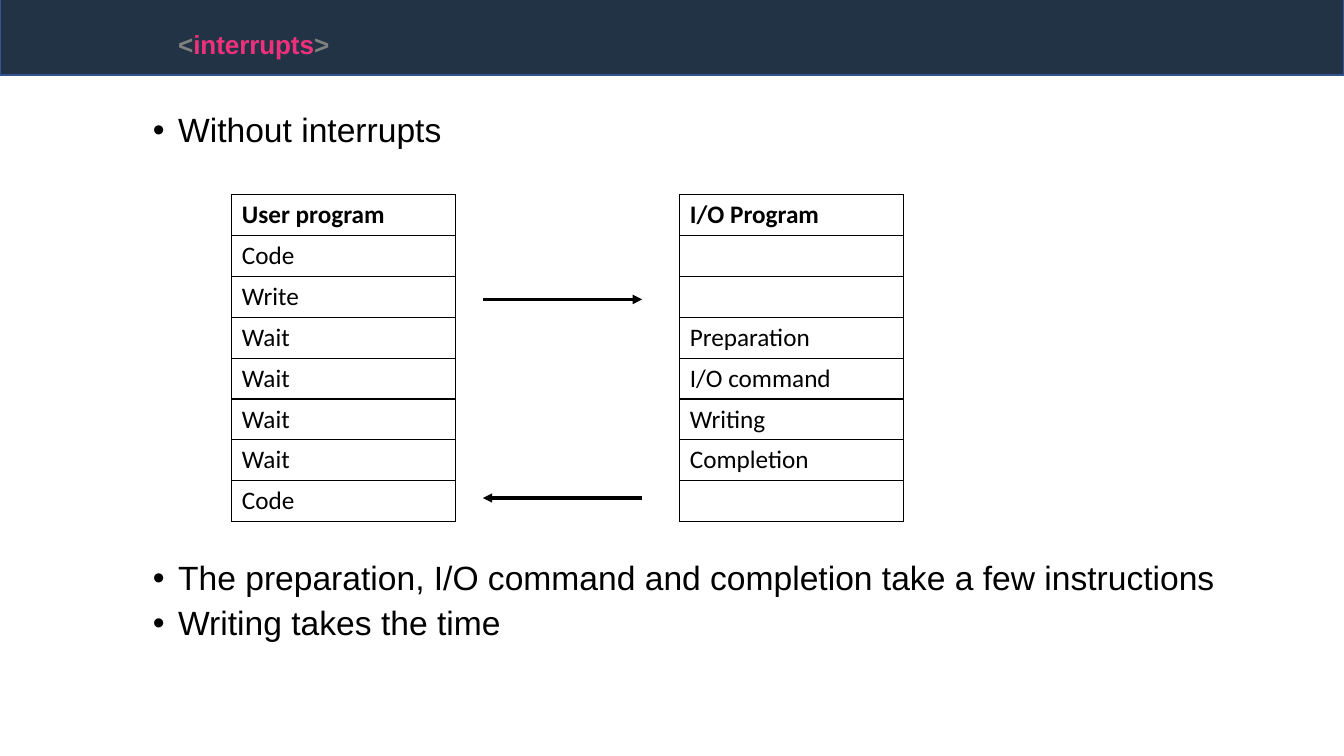
from lxml.etree import SubElement
from pptx import Presentation
from pptx.dml.color import RGBColor
from pptx.enum.shapes import MSO_CONNECTOR as Connector, MSO_SHAPE as Shape
from pptx.oxml.ns import qn
from pptx.util import Pt

COLORS = {"bar": "223346", "bar_edge": "325491", "text": "000000",
          "bracket": "808080", "title": "F1307C"}
USER_STEPS = ["User program", "Code", "Write", "Wait", "Wait", "Wait", "Wait", "Code"]
IO_STEPS = ["I/O Program", "", "", "Preparation", "I/O command", "Writing", "Completion", ""]
# Bullet text and the space before it
BULLETS = [("Without interrupts", 0),
           ("The preparation, I/O command and completion take a few instructions", 294),
           ("Writing takes the time", 6.5)]


def color(name):
    return RGBColor.from_string(COLORS[name])


def set_font(font, name, size, bold=False):
    font.name, font.size, font.bold = name, Pt(size), bold
    font.color.rgb = color("text")


def add_header(slide, left, top, width, height):
    bar = slide.shapes.add_shape(Shape.RECTANGLE, Pt(left), Pt(top), Pt(width), Pt(height))
    bar.shadow.inherit = False
    bar.fill.solid()
    bar.fill.fore_color.rgb = color("bar")
    bar.line.color.rgb = color("bar_edge")
    bar.line.width = Pt(1)

    # Raised tag-style title
    title = slide.shapes.add_textbox(Pt(left + 120.2), Pt(top + 15.5), Pt(125.3), Pt(46))
    title.text_frame.word_wrap = False
    paragraph = title.text_frame.paragraphs[0]
    set_font(paragraph.font, "Arial", 32, True)
    for text, shade in [("<", "bracket"), ("interrupts", "title"), (">", "bracket")]:
        run = paragraph.add_run()
        run.text = text
        run.font.color.rgb = color(shade)
        run._r.get_or_add_rPr().set("baseline", "30000")


def add_bullets(slide, left, top, width, height):
    body = slide.shapes.add_textbox(Pt(left), Pt(top), Pt(width), Pt(height)).text_frame
    body.word_wrap = True
    for index, (text, gap) in enumerate(BULLETS):
        paragraph = body.add_paragraph() if index else body.paragraphs[0]
        paragraph.text = text
        properties = paragraph._p.get_or_add_pPr()
        properties.set("marL", str(Pt(54)))
        properties.set("indent", str(Pt(-18)))
        paragraph.line_spacing = 0.9
        paragraph.space_before = Pt(gap)
        SubElement(properties, qn("a:buFont"), typeface="Arial")
        SubElement(properties, qn("a:buChar"), char="•")
        set_font(paragraph.font, "Arial", 24)


def set_borders(cell, sides):
    properties = cell._tc.get_or_add_tcPr()
    for side in "LRTB":
        border = SubElement(properties, qn(f"a:ln{side}"), w=str(Pt(1)))
        if side in sides:
            fill = SubElement(border, qn("a:solidFill"))
            SubElement(fill, qn("a:srgbClr"), val=COLORS["text"])
        else:
            SubElement(border, qn("a:noFill"))
    cell.fill.background()


def add_arrow(slide, left, y, width, end):
    arrow = slide.shapes.add_connector(Connector.STRAIGHT, Pt(left), Pt(y), Pt(left + width), Pt(y))
    arrow.line.color.rgb = color("text")
    arrow.line.width = Pt(2.25)
    SubElement(arrow.line._get_or_add_ln(), qn(f"a:{end}"), type="triangle")
    SubElement(arrow._element.spPr, qn("a:effectLst"))


def add_timeline(slide, left, top, width, height):
    rows = len(USER_STEPS)
    table = slide.shapes.add_table(rows, 3, Pt(left), Pt(top), Pt(width), Pt(height)).table
    table.first_row = table.horz_banding = False
    for column in table.columns:
        column.width = Pt(width / 3)
    for row, steps in enumerate(zip(USER_STEPS, [""] * rows, IO_STEPS)):
        table.rows[row].height = Pt(height / rows)
        for column, step in enumerate(steps):
            cell = table.cell(row, column)
            cell.text = step
            set_font(cell.text_frame.paragraphs[0].font, "Calibri", 18, row == 0)
            set_borders(cell, "LR" if column == 1 else "LRTB")

    # Handover to the I/O program and back
    arrow_left = left + width / 3 + 19.3
    add_arrow(slide, arrow_left, top + 74.9, 113.8, "tailEnd")
    add_arrow(slide, arrow_left, top + 216.7, 113.8, "headEnd")


def main():
    deck = Presentation()
    deck.slide_width, deck.slide_height = Pt(960), Pt(540)
    slide = deck.slides.add_slide(deck.slide_layouts[6])
    add_header(slide, 0, -2.5, 960, 56.2)
    add_bullets(slide, 66.2, 77.5, 839.5, 414.7)
    add_timeline(slide, 165.6, 139, 480, 233.6)
    deck.save("out.pptx")


if __name__ == "__main__":
    main()
